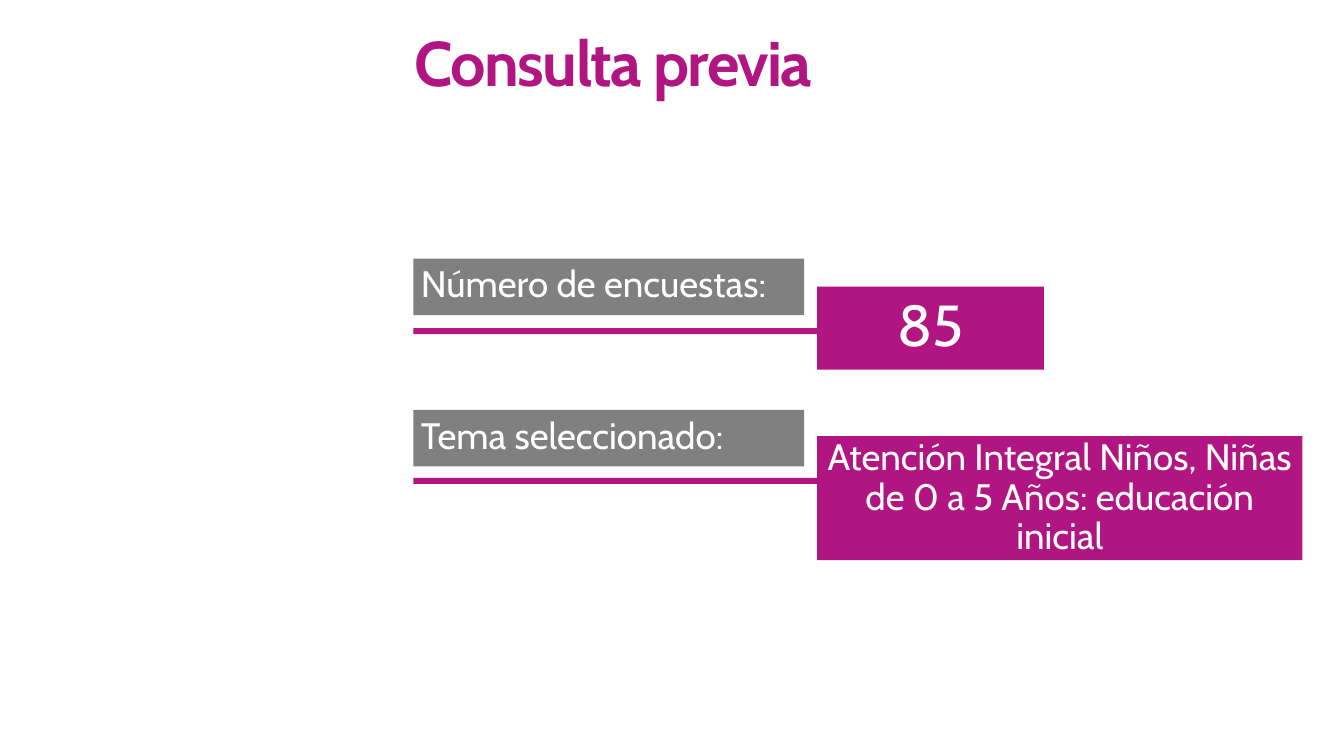
from pptx import Presentation
from pptx.dml.color import RGBColor
from pptx.enum.shapes import MSO_SHAPE
from pptx.enum.text import MSO_ANCHOR, MSO_AUTO_SIZE, PP_ALIGN
from pptx.util import Inches, Pt

RECT = MSO_SHAPE.RECTANGLE
TOP, MIDDLE = MSO_ANCHOR.TOP, MSO_ANCHOR.MIDDLE
LEFT, CENTER = PP_ALIGN.LEFT, PP_ALIGN.CENTER
NO_FIT = MSO_AUTO_SIZE.NONE

FONT = "Cabin"
PINK, GREY, WHITE = "B11582", "808080", "FFFFFF"

# Columns of the grid, in inches
LABEL_X, VALUE_X = 5.47, 10.81
LABEL_W, LABEL_H = 5.17, 0.75
RULE_DROP, RULE_H = 0.55, 0.08

# Label, its top, value, its top, width, height and text size
ROWS = [
    ("Número de encuestas:", 3.42, "85", 3.79, 3, 1.1, 55),
    ("Tema seleccionado:", 5.42,
     "Atención Integral Niños, Niñas de 0 a 5 Años: educación inicial",
     5.77, 6.42, 1.64, 35),
]


def color(code):
    return RGBColor.from_string(code)


def write(shape, text, size, ink, align, anchor, bold=False):
    frame = shape.text_frame
    frame.text = text
    frame.word_wrap = True
    frame.auto_size = NO_FIT
    frame.vertical_anchor = anchor
    frame.margin_left = frame.margin_right = Inches(0.1)
    frame.margin_top = frame.margin_bottom = Inches(0.1)
    para = frame.paragraphs[0]
    para.alignment = align
    para.line_spacing = 0.9
    para.space_before = Pt(0)
    run = para.runs[0]
    run.font.name = FONT
    run.font.size = Pt(size)
    run.font.bold = bold
    run.font.color.rgb = color(ink)
    return run


def add_box(slide, x, y, w, h, fill):
    box = slide.shapes.add_shape(RECT, *map(Inches, (x, y, w, h)))
    box.shadow.inherit = False
    box.fill.solid()
    box.fill.fore_color.rgb = color(fill)
    box.line.fill.background()
    return box


def add_title(slide, text):
    title = slide.shapes.title
    title.left, title.top = Inches(0.34), Inches(0.33)
    title.width, title.height = Inches(15.55), Inches(0.94)
    run = write(title, text, 60, PINK, CENTER, TOP, bold=True)
    # Tighter letter spacing, in hundredths of a point
    run.font._element.set("spc", "-150")


def add_row(slide, label, label_y, value, value_y, width, height, size):
    # Grey label
    box = add_box(slide, LABEL_X, label_y, LABEL_W, LABEL_H, GREY)
    write(box, label, 35, WHITE, LEFT, TOP)
    # Pink value
    box = add_box(slide, VALUE_X, value_y, width, height, PINK)
    write(box, value, size, WHITE, CENTER, MIDDLE)
    # Rule that leads to the value
    add_box(slide, LABEL_X, value_y + RULE_DROP, VALUE_X - LABEL_X, RULE_H,
            PINK)


def main():
    deck = Presentation()
    deck.slide_width, deck.slide_height = Inches(17.78), Inches(10)
    slide = deck.slides.add_slide(deck.slide_layouts[5])
    add_title(slide, "Consulta previa")
    for row in ROWS:
        add_row(slide, *row)
    deck.save("out.pptx")


if __name__ == "__main__":
    main()
